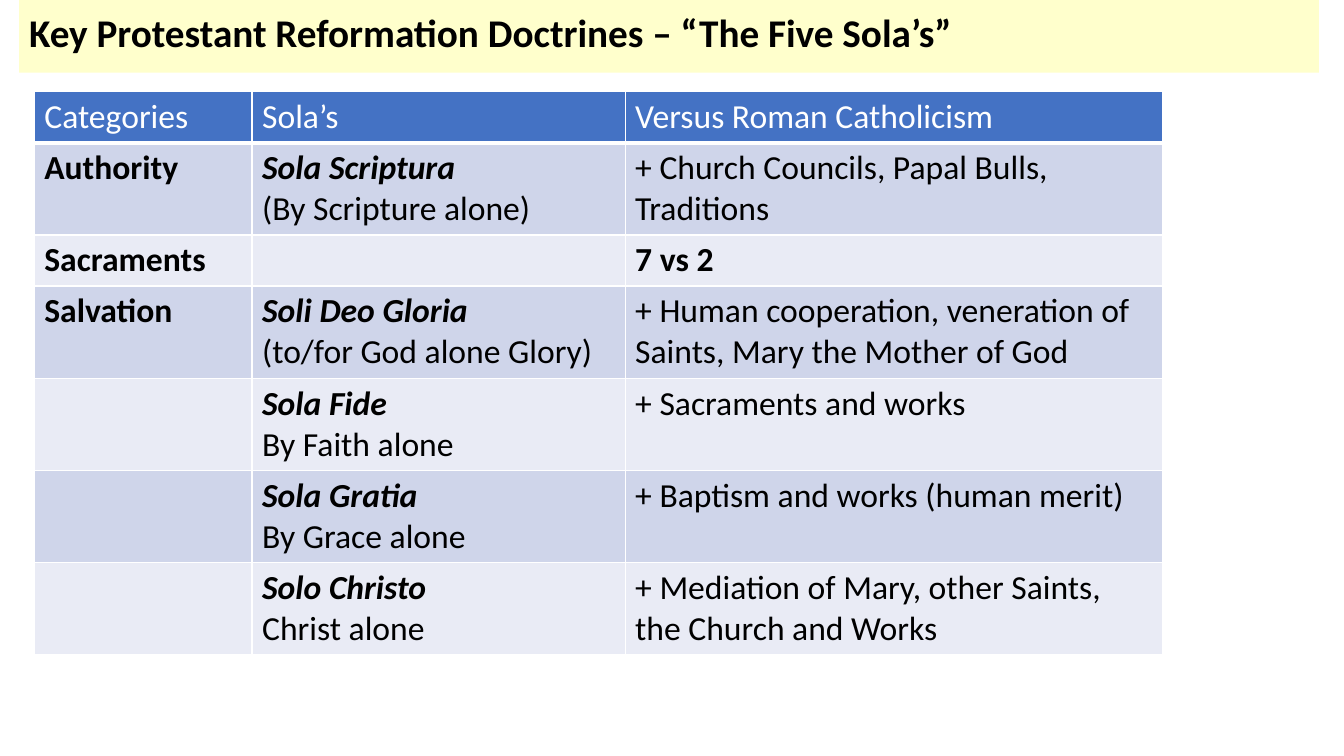
"""Build a slide with a table of the five solas of the Reformation."""
from dataclasses import dataclass

from lxml import etree
from pptx import Presentation
from pptx.dml.color import RGBColor
from pptx.enum.shapes import MSO_SHAPE
from pptx.enum.text import MSO_ANCHOR, PP_ALIGN
from pptx.oxml.ns import qn
from pptx.slide import Slide
from pptx.table import _Cell
from pptx.text.text import _Paragraph
from pptx.util import Inches, Pt

RECT = MSO_SHAPE.RECTANGLE
MIDDLE = MSO_ANCHOR.MIDDLE
LEFT = PP_ALIGN.LEFT


@dataclass(frozen=True)
class Theme:
    """Hold the colours, font and type sizes."""
    font: str = "Calibri"
    title: int = 28
    body: int = 24
    black: str = "000000"
    white: str = "FFFFFF"
    cream: str = "FFFFCC"
    head: str = "4472C4"
    bands: tuple[str, str] = ("CFD5EA", "E9EBF5")


@dataclass(frozen=True)
class Line:
    """Hold one paragraph and its style."""
    text: str
    bold: bool = False
    italic: bool = False


@dataclass(frozen=True)
class Row:
    """Hold the three cells of a table row."""
    topic: tuple[Line, ...]
    sola: tuple[Line, ...]
    versus: tuple[Line, ...]


THEME = Theme()
TITLE = Line("Key Protestant Reformation Doctrines – “The Five Sola’s”", True)
WIDTHS = (2.16, 3.7, 5.33)
HEIGHT = 0.41


def make_row(topic: str, latin: str, gloss: str, versus: str,
             strong: bool = False) -> Row:
    """Return a body row with its Latin name above its meaning."""
    return Row(
        (Line(topic, True),) if topic else (),
        (Line(latin, True, True), Line(gloss)) if latin else (),
        (Line(versus, strong),),
    )


ROWS = (
    Row((Line("Categories"),), (Line("Sola’s"),),
        (Line("Versus Roman Catholicism"),)),
    make_row("Authority", "Sola Scriptura", "(By Scripture alone)",
             "+ Church Councils, Papal Bulls, Traditions"),
    make_row("Sacraments", "", "", "7 vs 2", True),
    make_row("Salvation", "Soli Deo Gloria", "(to/for God alone Glory)",
             "+ Human cooperation, veneration of Saints, Mary the Mother of God"),
    make_row("", "Sola Fide", "By Faith alone", "+ Sacraments and works"),
    make_row("", "Sola Gratia", "By Grace alone",
             "+ Baptism and works (human merit)"),
    make_row("", "Solo Christo", "Christ alone",
             "+ Mediation of Mary, other Saints, the Church and Works"),
)


def write_line(para: _Paragraph, line: Line, size: int, color: str) -> None:
    """Write one styled line into a paragraph."""
    run = para.add_run()
    run.text = line.text
    style = {"name": THEME.font, "size": Pt(size),
             "bold": line.bold, "italic": line.italic}
    for key, value in style.items():
        setattr(run.font, key, value)
    run.font.color.rgb = RGBColor.from_string(color)


def draw_title(slide: Slide) -> None:
    """Draw the title band."""
    band = slide.shapes.add_shape(
        RECT, Inches(0.19), Inches(0), Inches(12.89), Inches(0.72))
    band.shadow.inherit = False
    band.fill.solid()
    band.fill.fore_color.rgb = RGBColor.from_string(THEME.cream)
    band.line.fill.background()
    frame = band.text_frame
    layout = {"word_wrap": True, "vertical_anchor": MIDDLE,
              "margin_top": Inches(0.05), "margin_bottom": Inches(0.08)}
    for key, value in layout.items():
        setattr(frame, key, value)
    para = frame.paragraphs[0]
    para.alignment = LEFT
    para.line_spacing = 0.9
    write_line(para, TITLE, THEME.title, THEME.black)


def add_edges(cell: _Cell, base: int) -> None:
    """Add white cell borders with a given bottom width."""
    props = cell._tc.get_or_add_tcPr()
    edges = {"lnL": 1, "lnR": 1, "lnT": 1, "lnB": base}
    for place, (tag, width) in enumerate(edges.items()):
        edge = etree.Element(qn(f"a:{tag}"), w=str(Pt(width)))
        fill = etree.SubElement(edge, qn("a:solidFill"))
        etree.SubElement(fill, qn("a:srgbClr"), val=THEME.white)
        props.insert(place, edge)


def fill_cell(cell: _Cell, lines: tuple[Line, ...], head: bool,
              fill: str) -> None:
    """Fill a cell with its colour, borders and lines."""
    cell.fill.solid()
    cell.fill.fore_color.rgb = RGBColor.from_string(fill)
    add_edges(cell, 3 if head else 1)
    frame = cell.text_frame
    color = THEME.white if head else THEME.black
    for index, line in enumerate(lines):
        para = frame.add_paragraph() if index else frame.paragraphs[0]
        write_line(para, line, THEME.body, color)


def draw_table(slide: Slide) -> None:
    """Draw the table of doctrines."""
    table = slide.shapes.add_table(
        len(ROWS), len(WIDTHS), Inches(0.34), Inches(0.91),
        Inches(sum(WIDTHS)), Inches(HEIGHT * len(ROWS))).table
    for column, width in zip(table.columns, WIDTHS):
        column.width = Inches(width)
    for index, row in enumerate(ROWS):
        table.rows[index].height = Inches(HEIGHT)
        head = index == 0
        fill = THEME.head if head else THEME.bands[(index - 1) % 2]
        for place, lines in enumerate((row.topic, row.sola, row.versus)):
            fill_cell(table.cell(index, place), lines, head, fill)


def main() -> None:
    """Build and save the slide."""
    deck = Presentation()
    deck.slide_width = Inches(13.33)
    deck.slide_height = Inches(7.5)
    slide = deck.slides.add_slide(deck.slide_layouts[6])
    draw_title(slide)
    draw_table(slide)
    deck.save("out.pptx")


if __name__ == "__main__":
    main()
